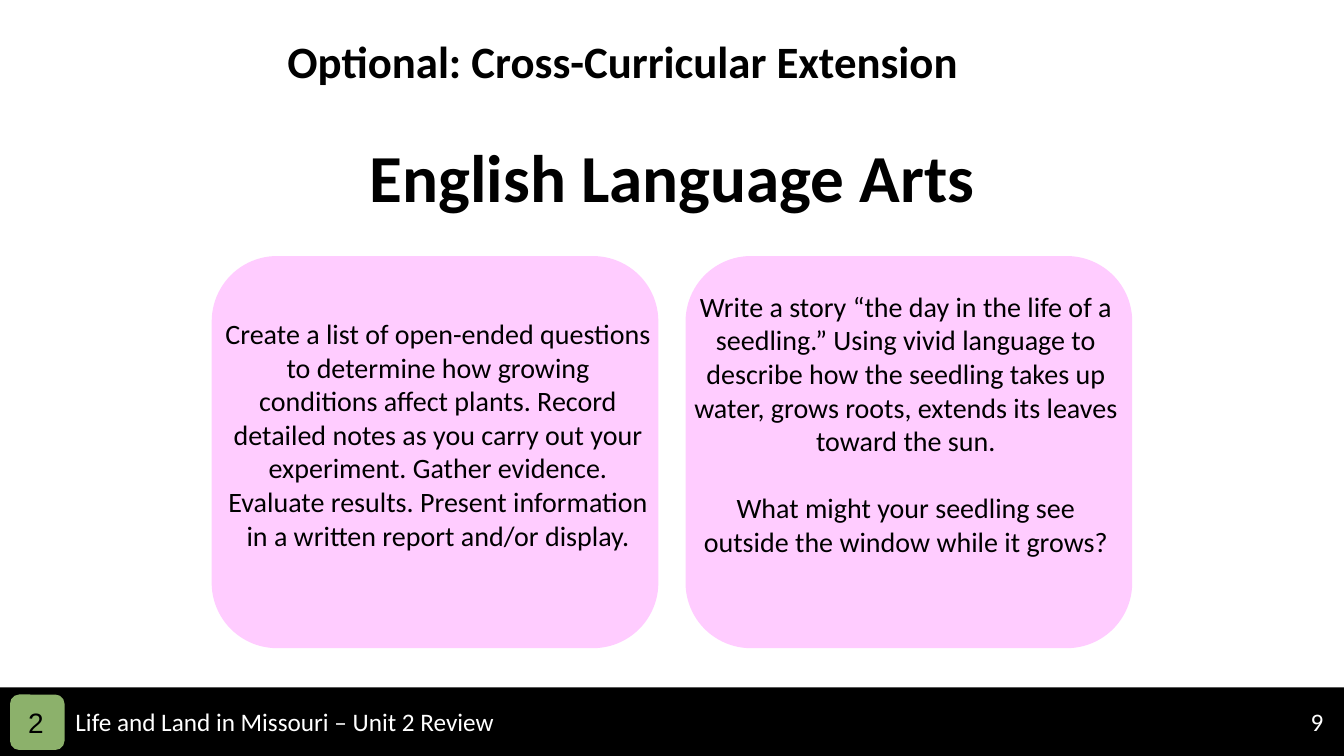
import dataclasses

import pptx
import pptx.dml.color
import pptx.enum.shapes
import pptx.enum.text
import pptx.util

Inches = pptx.util.Inches
Shapes = pptx.enum.shapes.MSO_SHAPE
Align = pptx.enum.text.PP_ALIGN

BLACK = "000000"
WHITE = "FFFFFF"
PINK = "FFCCFF"
GREEN = "8CB16B"


@dataclasses.dataclass(frozen=True)
class Area:
    left: float
    top: float
    width: float
    height: float

    def lengths(self) -> tuple:
        return tuple(Inches(value) for value in dataclasses.astuple(self))


@dataclasses.dataclass(frozen=True)
class Panel:
    area: Area
    preset: int
    fill: str


@dataclasses.dataclass(frozen=True)
class Label:
    area: Area
    paragraphs: tuple[str, ...]
    size: float
    color: str = BLACK
    font: str = "Calibri"
    bold: bool = False
    align: int = Align.CENTER


PANELS = [
    Panel(Area(0, 6.82, 13.33, 0.7), Shapes.RECTANGLE, BLACK),
    Panel(Area(0.1, 6.89, 0.54, 0.55), Shapes.ROUNDED_RECTANGLE, GREEN),
    *(
        Panel(Area(left, 2.54, 4.43, 3.89), Shapes.ROUNDED_RECTANGLE, PINK)
        for left in (2.1, 6.8)
    ),
]

TITLE = Label(
    Area(2.13, 0.28, 8.1, 0.64), ("Optional: Cross-Curricular Extension",), 32, bold=True
)

LABELS = [
    Label(Area(12.9, 6.96, 0.34, 0.4), ("9",), 18, WHITE, align=Align.LEFT),
    Label(
        Area(0.65, 6.96, 7.83, 0.4),
        ("Life and Land in Missouri – Unit 2 Review",),
        18,
        WHITE,
        align=Align.LEFT,
    ),
    Label(Area(0.18, 6.95, 3.57, 0.44), ("2",), 20, font="Arial", align=Align.LEFT),
    Label(Area(2.87, 1.29, 7.6, 0.91), ("English Language Arts",), 48, bold=True),
    Label(
        Area(2.13, 3.09, 4.43, 2.79),
        (
            "Create a list of open-ended questions to determine how growing "
            "conditions affect plants. Record detailed notes as you carry out your "
            "experiment. Gather evidence. Evaluate results. Present information in "
            "a written report and/or display.",
        ),
        20,
    ),
    Label(
        Area(6.77, 2.82, 4.43, 3.47),
        (
            "Write a story “the day in the life of a seedling.” Using vivid "
            "language to describe how the seedling takes up water, grows roots, "
            "extends its leaves toward the sun.",
            "What might your seedling see outside the window while it grows?",
        ),
        20,
    ),
]


def rgb(color: str) -> pptx.dml.color.RGBColor:
    return pptx.dml.color.RGBColor.from_string(color)


def add_panel(page, panel: Panel) -> None:
    shape = page.shapes.add_shape(panel.preset, *panel.area.lengths())
    shape.shadow.inherit = False
    shape.fill.solid()
    shape.fill.fore_color.rgb = rgb(panel.fill)
    shape.line.fill.background()


def write_label(box, label: Label) -> None:
    """Place a text box or placeholder and write the label into it."""
    box.left, box.top, box.width, box.height = label.area.lengths()
    frame = box.text_frame
    frame.word_wrap = True
    frame.auto_size = pptx.enum.text.MSO_AUTO_SIZE.NONE
    frame.vertical_anchor = pptx.enum.text.MSO_ANCHOR.TOP
    for index, text in enumerate(label.paragraphs):
        para = frame.add_paragraph() if index else frame.paragraphs[0]
        para.text = text
        para.alignment = label.align
        if index:
            para.space_before = pptx.util.Pt(24)
        para.font.name = label.font
        para.font.size = pptx.util.Pt(label.size)
        para.font.bold = label.bold
        para.font.color.rgb = rgb(label.color)


def main() -> None:
    deck = pptx.Presentation()
    deck.slide_width = Inches(13.33)
    deck.slide_height = Inches(7.5)
    page = deck.slides.add_slide(deck.slide_layouts.get_by_name("Title Only"))
    write_label(page.shapes.title, TITLE)
    for panel in PANELS:
        add_panel(page, panel)
    for label in LABELS:
        write_label(page.shapes.add_textbox(*label.area.lengths()), label)
    deck.save("out.pptx")


if __name__ == "__main__":
    main()
